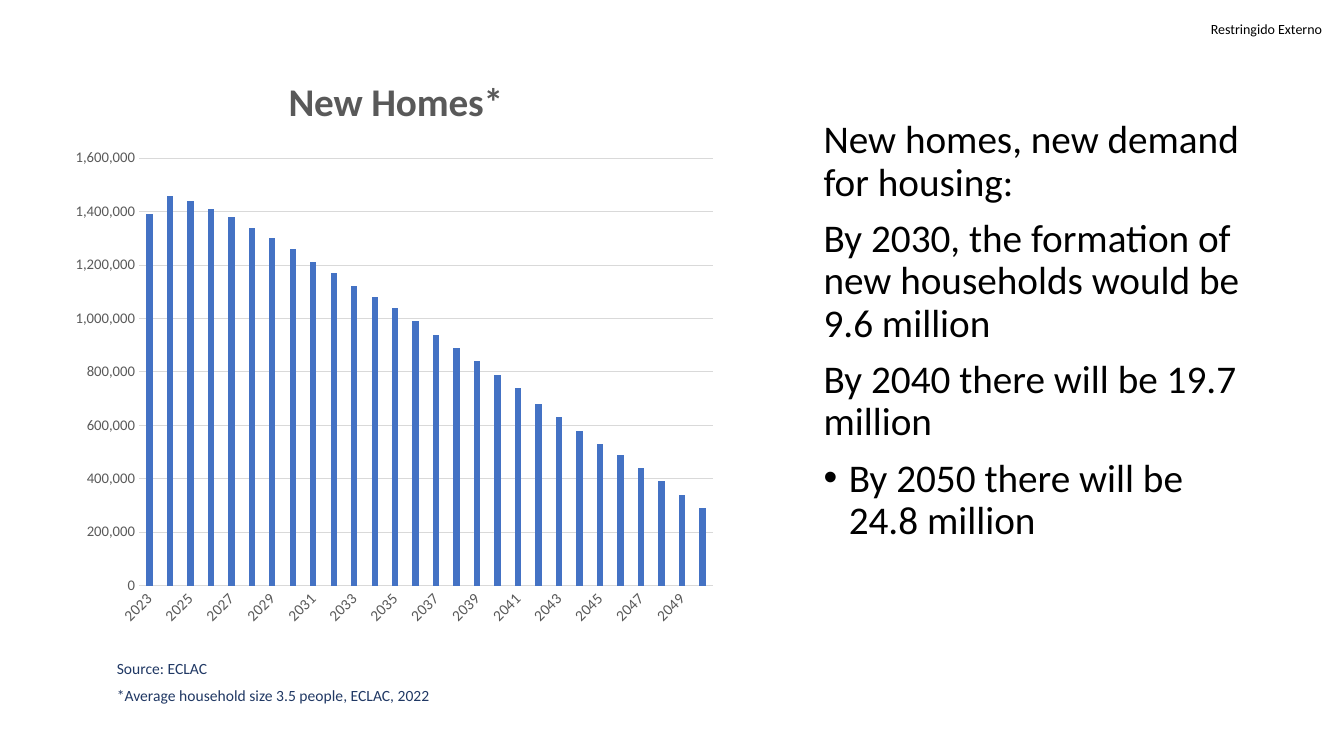
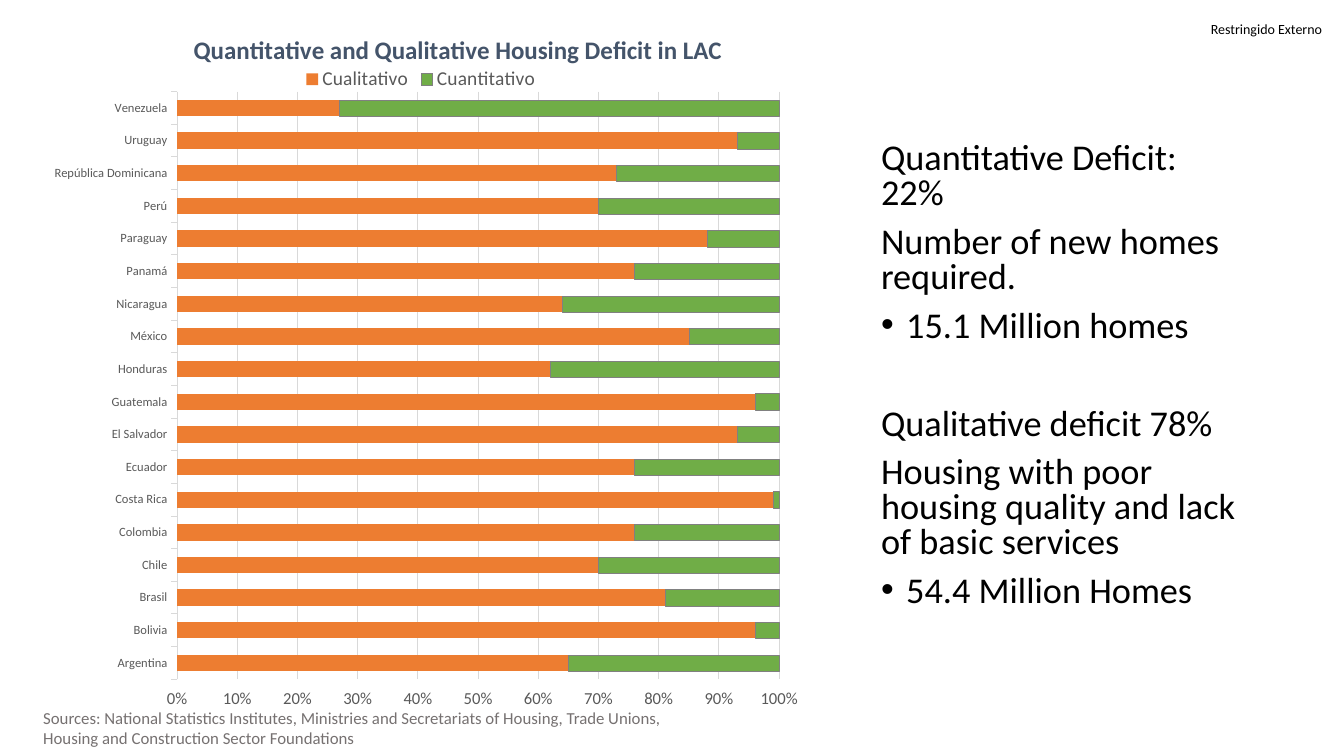
from dataclasses import dataclass

from pptx import Presentation
from pptx.chart.data import CategoryChartData
from pptx.dml.color import RGBColor as RGB
from pptx.enum.chart import XL_CHART_TYPE as ChartKind
from pptx.enum.chart import XL_LEGEND_POSITION as LegendPosition
from pptx.enum.chart import XL_TICK_MARK as TickMark
from pptx.oxml import parse_xml
from pptx.oxml.ns import nsdecls, qn
from pptx.oxml.xmlchemy import OxmlElement
from pptx.util import Inches, Pt


@dataclass(frozen=True)
class Theme:
    font: str = "Calibri"
    black: str = "000000"
    axis_text: str = "595959"
    grid: str = "D9D9D9"
    outline: str = "808080"
    navy: str = "203864"
    slate: str = "44546A"
    warm_gray: str = "767171"
    blue: str = "4472C4"
    orange: str = "ED7D31"
    green: str = "70AD47"
    marking_size: float = 10
    chart_size: float = 10
    year_size: float = 11
    homes_scale_size: float = 10.5
    country_size: float = 9
    share_scale_size: float = 12
    homes_body_size: float = 28
    deficit_body_size: float = 25.9
    homes_title_size: float = 28
    deficit_title_size: float = 18
    legend_size: float = 14
    note_size: float = 11.1
    source_size: float = 12


THEME = Theme()

NEW_HOMES = [
    1390000, 1460000, 1440000, 1410000, 1380000, 1340000, 1300000,
    1260000, 1210000, 1170000, 1120000, 1080000, 1040000, 990000,
    940000, 890000, 840000, 790000, 740000, 680000, 630000,
    580000, 530000, 490000, 440000, 390000, 340000, 290000,
]

QUALITATIVE_SHARE = {
    "Argentina": 65, "Bolivia": 96, "Brasil": 81, "Chile": 70,
    "Colombia": 76, "Costa Rica": 99, "Ecuador": 76, "El Salvador": 93,
    "Guatemala": 96, "Honduras": 62, "México": 85, "Nicaragua": 64,
    "Panamá": 76, "Paraguay": 88, "Perú": 70, "República Dominicana": 73,
    "Uruguay": 93, "Venezuela": 27,
}


def style_font(font, size, color, bold=False):
    font.name = THEME.font
    font.size = Pt(size)
    font.bold = bold
    font.color.rgb = RGB.from_string(color)


def add_bullet(paragraph):
    properties = paragraph._p.get_or_add_pPr()
    properties.set("marL", str(Inches(0.25)))
    properties.set("indent", str(Inches(-0.25)))
    bullet_font = OxmlElement("a:buFont")
    bullet_font.set("typeface", "Arial")
    bullet = OxmlElement("a:buChar")
    bullet.set("char", "•")
    properties.extend([bullet_font, bullet])


def add_text(slide, box, lines, size, color, line_spacing=1.0,
             space_before=0, bulleted=(), section_starts=(), section_gap=0):
    frame = slide.shapes.add_textbox(*map(Inches, box)).text_frame
    frame.word_wrap = True
    for index, line in enumerate(lines):
        paragraph = frame.paragraphs[0] if index == 0 else frame.add_paragraph()
        paragraph.text = line
        paragraph.line_spacing = line_spacing
        gap = section_gap if index in section_starts else space_before
        paragraph.space_before = Pt(gap)
        if index in bulleted:
            add_bullet(paragraph)
        style_font(paragraph.font, size, color)
    return frame


def add_marking(slide):
    frame = add_text(slide, (12.01, 0.2, 1.14, 0.17), ["Restringido Externo"],
                     THEME.marking_size, THEME.black)
    frame.word_wrap = False
    frame.margin_left = frame.margin_right = 0
    frame.margin_top = frame.margin_bottom = 0


def place(element, index, x, y, size=None):
    for previous in element.findall(qn("c:layout")):
        element.remove(previous)
    target = '<c:layoutTarget val="inner"/>' if size else ""
    extent = '<c:w val="{}"/><c:h val="{}"/>'.format(*size) if size else ""
    element.insert(index, parse_xml(
        f'<c:layout {nsdecls("c")}><c:manualLayout>{target}'
        '<c:xMode val="edge"/><c:yMode val="edge"/>'
        f'<c:x val="{x}"/><c:y val="{y}"/>{extent}'
        '</c:manualLayout></c:layout>'))


def style_axis(axis, size, tick, number_format=None):
    axis.major_tick_mark = tick
    axis.minor_tick_mark = TickMark.NONE
    style_font(axis.tick_labels.font, size, THEME.axis_text)
    if number_format is None:
        axis.has_major_gridlines = False
        line = axis.format.line
    else:
        axis.format.line.fill.background()
        axis.has_major_gridlines = True
        line = axis.major_gridlines.format.line
        axis.tick_labels.number_format = number_format
        axis.tick_labels.number_format_is_linked = False
    line.color.rgb = RGB.from_string(THEME.grid)
    line.width = Pt(0.75)


def add_bar_chart(slide, kind, box, categories, series, colors,
                  gap, overlap, plot_area):
    data = CategoryChartData()
    data.categories = categories
    for name, values in series.items():
        data.add_series(name, values)
    chart = slide.shapes.add_chart(kind, *map(Inches, box), data).chart
    style_font(chart.font, THEME.chart_size, THEME.black)
    chart.has_legend = False
    plot = chart.plots[0]
    plot.vary_by_categories = False
    plot.gap_width = gap
    plot.overlap = overlap
    for bars, color in zip(plot.series, colors):
        bars.format.fill.solid()
        bars.format.fill.fore_color.rgb = RGB.from_string(color)
    width, height = box[2:]
    x, y, *size = [length / side for length, side
                   in zip(plot_area, (width, height) * 2)]
    place(chart._chartSpace.chart.plotArea, 0, x, y, size)
    return chart


def add_title(chart, text, size, color, x, y):
    chart.has_title = True
    title = chart.chart_title
    title.include_in_layout = False
    title.text_frame.text = text
    style_font(title.text_frame.paragraphs[0].font, size, color, bold=True)
    place(title._element, 1, x, y)


def build_new_homes(slide):
    add_text(slide, (8.07, 1.14, 4.35, 5.61), [
        "New homes, new demand for housing:",
        "By 2030, the formation of new households would be 9.6 million",
        "By 2040 there will be 19.7 million",
        "By 2050 there will be 24.8 million",
    ], THEME.homes_body_size, THEME.black, 0.9, 10, bulleted=(3,))
    years = [str(2023 + offset) for offset in range(len(NEW_HOMES))]
    chart = add_bar_chart(
        slide, ChartKind.COLUMN_CLUSTERED, (0.62, 0.5, 6.58, 5.82),
        years, {"Series 1": NEW_HOMES}, [THEME.blue],
        219, -27, (0.76, 1.07, 5.69, 4.24))
    add_title(chart, "New Homes*", THEME.homes_title_size, THEME.axis_text,
              0.33, 0.03)
    style_axis(chart.category_axis, THEME.year_size, TickMark.NONE)
    chart.category_axis._element.txPr.find(qn("a:bodyPr")).set("rot", "-2700000")
    style_axis(chart.value_axis, THEME.homes_scale_size, TickMark.NONE, "#,##0")
    chart.value_axis.minimum_scale = 0
    chart.value_axis.maximum_scale = 1600000
    chart.value_axis.major_unit = 200000
    add_text(slide, (1.06, 6.54, 5.28, 0.52), [
        "Source: ECLAC",
        "*Average household size 3.5 people, ECLAC, 2022",
    ], THEME.note_size, THEME.navy, 0.7, 10)


def build_housing_deficit(slide):
    add_text(slide, (8.64, 1.37, 3.8, 4.76), [
        "Quantitative Deficit: 22%",
        "Number of new homes required.",
        "15.1 Million homes",
        "Qualitative deficit 78%",
        "Housing with poor housing quality and lack of basic services",
        "54.4 Million Homes",
    ], THEME.deficit_body_size, THEME.black, 0.8, 10, bulleted=(2, 5),
        section_starts=(3,), section_gap=45)
    qualitative = list(QUALITATIVE_SHARE.values())
    shares = {
        "Cualitativo": qualitative,
        "Cuantitativo": [100 - share for share in qualitative],
    }
    chart = add_bar_chart(
        slide, ChartKind.BAR_STACKED_100, (0.54, 0.13, 7.94, 7.09),
        list(QUALITATIVE_SHARE), shares, [THEME.orange, THEME.green],
        100, 100, (1.15, 0.78, 6.03, 5.83))
    quantitative_outline = chart.plots[0].series[1].format.line
    quantitative_outline.color.rgb = RGB.from_string(THEME.outline)
    quantitative_outline.width = Pt(0.25)
    add_title(chart, "Quantitative and Qualitative Housing Deficit in LAC",
              THEME.deficit_title_size, THEME.slate, 0.16, 0.02)
    chart.has_legend = True
    chart.legend.position = LegendPosition.TOP
    chart.legend.include_in_layout = False
    style_font(chart.legend.font, THEME.legend_size, THEME.axis_text)
    place(chart.legend._element, 1, 0.3, 0.07)
    style_axis(chart.category_axis, THEME.country_size, TickMark.OUTSIDE)
    style_axis(chart.value_axis, THEME.share_scale_size, TickMark.OUTSIDE, "0%")
    add_text(slide, (0.33, 6.97, 6.67, 0.5), [
        "Sources: National Statistics Institutes, Ministries and Secretariats of "
        "Housing, Trade Unions, Housing and Construction Sector Foundations",
    ], THEME.source_size, THEME.warm_gray)


def main():
    deck = Presentation()
    deck.slide_width = Inches(13.33)
    deck.slide_height = Inches(7.5)
    for build in (build_new_homes, build_housing_deficit):
        slide = deck.slides.add_slide(deck.slide_layouts[6])
        add_marking(slide)
        build(slide)
    deck.save("out.pptx")


if __name__ == "__main__":
    main()
